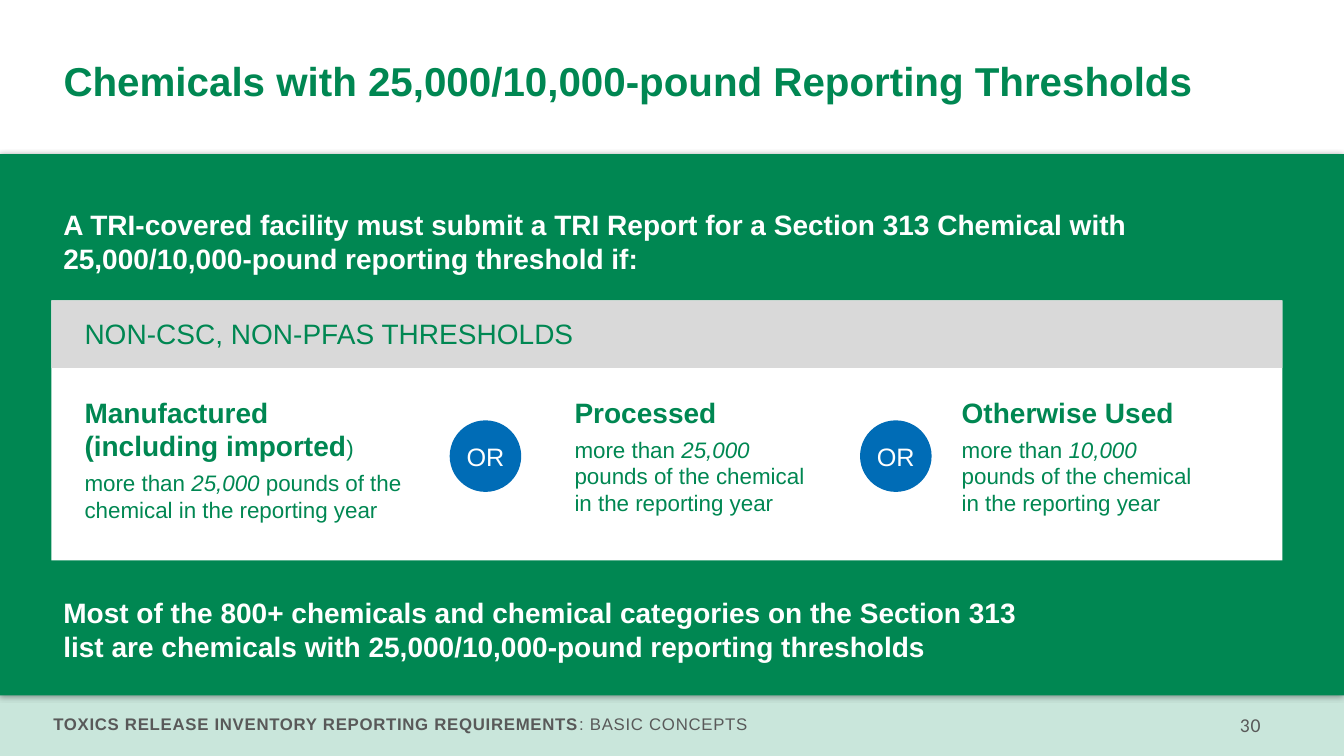
import pptx
import pptx.util
import pptx.dml.color
import pptx.enum.shapes
import pptx.enum.text
import pptx.oxml
from pptx.util import Inches

GREEN = pptx.dml.color.RGBColor(0x00, 0x87, 0x52)
PALE_GREEN = pptx.dml.color.RGBColor(0xC9, 0xE6, 0xDB)
BLUE = pptx.dml.color.RGBColor(0x00, 0x6C, 0xB6)
LIGHT_GRAY = pptx.dml.color.RGBColor(0xD9, 0xD9, 0xD9)
DARK_GRAY = pptx.dml.color.RGBColor(0x59, 0x59, 0x59)
WHITE = pptx.dml.color.RGBColor(0xFF, 0xFF, 0xFF)

TITLE = "Chemicals with 25,000/10,000-pound Reporting Thresholds"
INTRO = ("A TRI-covered facility must submit a TRI Report for a Section 313 Chemical with "
         "25,000/10,000-pound reporting threshold if:")
PANEL_HEADING = "NON-CSC, NON-PFAS THRESHOLDS"
CLOSING = ("Most of the 800+ chemicals and chemical categories on the Section 313 "
           "list are chemicals with 25,000/10,000-pound reporting thresholds")
FOOTER = ("TOXICS RELEASE INVENTORY REPORTING REQUIREMENTS", ": BASIC CONCEPTS")
PAGE_NUMBER = "30"
ACTIVITIES = [
    ("Manufactured (including imported", ")", "25,000", 0.74, 3.37),
    ("Processed", "", "25,000", 5.6, 2.64),
    ("Otherwise Used", "", "10,000", 9.44, 2.64),
]
OR_LEFTS = [4.46, 8.53]

PANEL_LEFT, PANEL_TOP, PANEL_WIDTH = 0.51, 2.98, 12.21
SHADOW = ('<a:effectLst xmlns:a="http://schemas.openxmlformats.org/drawingml/2006/main">'
          '<a:outerShdw blurRad="50800" dist="12700" dir="5400000" rotWithShape="0">'
          '<a:srgbClr val="000000"><a:alpha val="34000"/></a:srgbClr>'
          '</a:outerShdw></a:effectLst>')

prs = pptx.Presentation()
prs.slide_width, prs.slide_height = Inches(13.33), Inches(7.5)
slide = prs.slides.add_slide(prs.slide_layouts[5])


def add_block(kind, left, top, width, height, color):
    block = slide.shapes.add_shape(kind, Inches(left), Inches(top), Inches(width), Inches(height))
    block.shadow.inherit = False
    block.fill.solid()
    block.fill.fore_color.rgb = color
    block.line.fill.background()
    return block


def style(font, size, color, bold=False, name="Arial"):
    font.name, font.size, font.bold = name, pptx.util.Pt(size), bold
    font.color.rgb = color


def add_paragraphs(left, top, width, height, count=1):
    frame = slide.shapes.add_textbox(Inches(left), Inches(top), Inches(width), Inches(height)).text_frame
    frame.word_wrap = True
    for _ in range(count - 1):
        frame.add_paragraph()
    return frame.paragraphs


def add_run(paragraph, text):
    run = paragraph.add_run()
    run.text = text
    return run


def add_line(text, left, top, width, height, color, bold):
    line = add_paragraphs(left, top, width, height)[0]
    line.text = text
    style(line.font, 20, color, bold)


RECTANGLE = pptx.enum.shapes.MSO_SHAPE.RECTANGLE
OVAL = pptx.enum.shapes.MSO_SHAPE.OVAL

add_block(RECTANGLE, 0, 6.72, 13.33, 0.78, PALE_GREEN)
band = add_block(RECTANGLE, 0, 1.53, 13.33, 5.37, GREEN)
band_properties = band._element.spPr
for effects in band_properties.findall(pptx.oxml.ns.qn("a:effectLst")):
    band_properties.remove(effects)
band_properties.append(pptx.oxml.parse_xml(SHADOW))
add_block(RECTANGLE, PANEL_LEFT, PANEL_TOP, PANEL_WIDTH, 2.58, WHITE)
add_block(RECTANGLE, PANEL_LEFT, PANEL_TOP, PANEL_WIDTH, 0.67, LIGHT_GRAY)

title = slide.shapes.title
title.left, title.top, title.width, title.height = Inches(0.53), Inches(0.42), Inches(12.37), Inches(0.81)
title.text_frame.text = TITLE
title.text_frame.vertical_anchor = pptx.enum.text.MSO_ANCHOR.MIDDLE
heading = title.text_frame.paragraphs[0]
heading.alignment = pptx.enum.text.PP_ALIGN.LEFT
heading.line_spacing = 0.9
style(heading.font, 28.8, GREEN, True)

add_line(INTRO, 0.53, 2.01, 12.07, 0.94, WHITE, True)
add_line(PANEL_HEADING, 0.74, 3.09, 9.77, 0.46, GREEN, False)
add_line(CLOSING, 0.53, 5.86, 9.98, 0.77, WHITE, True)

for activity, ending, pounds, left, width in ACTIVITIES:
    name, rule = add_paragraphs(left, 3.87, width, 1.33, 2)
    style(name.font, 20, GREEN, True)
    add_run(name, activity)
    if ending:
        style(add_run(name, ending).font, 16, GREEN)
    style(rule.font, 16, GREEN)
    rule.space_before = pptx.util.Pt(5)
    add_run(rule, "more than ")
    add_run(rule, pounds).font.italic = True
    add_run(rule, " pounds of the chemical in the reporting year")

for left in OR_LEFTS:
    frame = add_block(OVAL, left, 4.17, 0.71, 0.71, BLUE).text_frame
    frame.word_wrap = False
    frame.margin_left = frame.margin_right = 0
    frame.vertical_anchor = pptx.enum.text.MSO_ANCHOR.MIDDLE
    frame.text = "OR"
    frame.paragraphs[0].alignment = pptx.enum.text.PP_ALIGN.CENTER
    style(frame.paragraphs[0].font, 18, WHITE)

footer = add_paragraphs(0.43, 7.03, 8.42, 0.3)[0]
style(footer.font, 12, DARK_GRAY)
for text, bold in zip(FOOTER, (True, False)):
    add_run(footer, text).font.bold = bold
page = add_paragraphs(11.27, 7.02, 1.33, 0.34)[0]
page.alignment = pptx.enum.text.PP_ALIGN.RIGHT
style(page.font, 14, DARK_GRAY, name="Calibri")
add_run(page, PAGE_NUMBER)
for run in footer.runs + page.runs:
    run._r.get_or_add_rPr().set("spc", "50")

prs.save("out.pptx")
